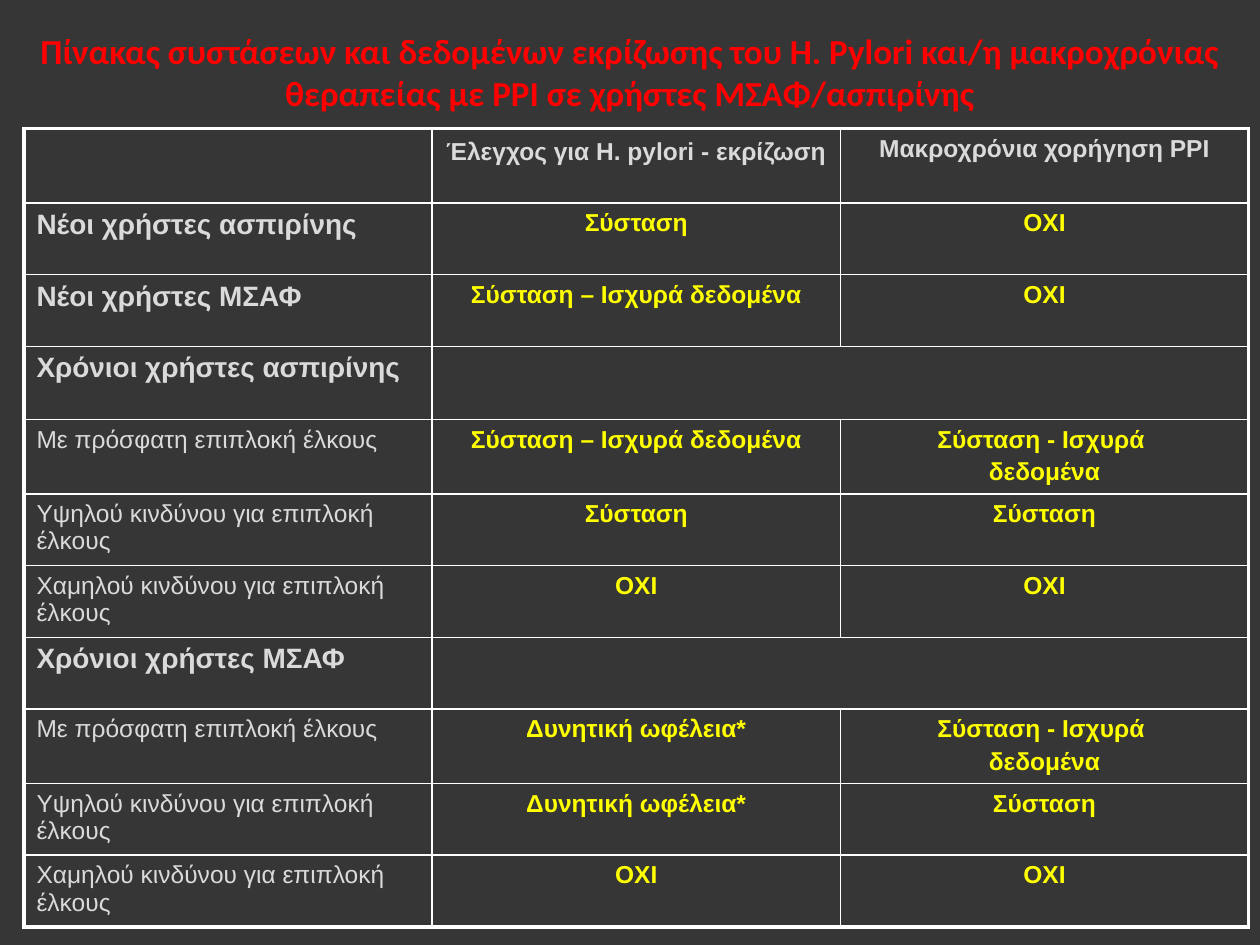
import pptx
import pptx.dml.color
import pptx.enum.text
import pptx.oxml.ns
import pptx.util
from lxml import etree
from pptx.util import Inches

BACKGROUND = pptx.dml.color.RGBColor(0x36, 0x36, 0x36)
RED = pptx.dml.color.RGBColor(0xFF, 0x00, 0x00)
GREY = pptx.dml.color.RGBColor(0xDA, 0xDA, 0xDA)
YELLOW = pptx.dml.color.RGBColor(0xFF, 0xFF, 0x00)
WHITE = pptx.dml.color.RGBColor(0xFF, 0xFF, 0xFF)

TITLE = ("Πίνακας συστάσεων και δεδομένων εκρίζωσης του H. Pylori και/η "
         "μακροχρόνιας θεραπείας με PPI σε χρήστες ΜΣΑΦ/ασπιρίνης")
HEADERS = ["Έλεγχος για H. pylori - εκρίζωση", "Μακροχρόνια χορήγηση PPI"]
RECENT = "Με πρόσφατη επιπλοκή έλκους"
HIGH_RISK = "Υψηλού κινδύνου για επιπλοκή έλκους"
LOW_RISK = "Χαμηλού κινδύνου για επιπλοκή έλκους"
ADVISED = "Σύσταση"
STRONG = "Σύσταση – Ισχυρά δεδομένα"
STRONG_TWO_LINES = "Σύσταση - Ισχυρά \nδεδομένα"
POSSIBLE = "Δυνητική ωφέλεια*"
NO = "ΟΧΙ"
USER_GROUPS = [
    ("Νέοι χρήστες ασπιρίνης", [ADVISED, NO]),
    ("Νέοι χρήστες ΜΣΑΦ", [STRONG, NO]),
    ("Χρόνιοι χρήστες ασπιρίνης", []),
    (RECENT, [STRONG, STRONG_TWO_LINES]),
    (HIGH_RISK, [ADVISED, ADVISED]),
    (LOW_RISK, [NO, NO]),
    ("Χρόνιοι χρήστες ΜΣΑΦ", []),
    (RECENT, [POSSIBLE, STRONG_TWO_LINES]),
    (HIGH_RISK, [POSSIBLE, ADVISED]),
    (LOW_RISK, [NO, NO]),
]
RISK_LEVELS = (RECENT, HIGH_RISK, LOW_RISK)
ROW_HEIGHTS = [0.59, 0.57, 0.57, 0.58, 0.59, 0.57, 0.57, 0.57, 0.59, 0.57, 0.57]
COLUMN_WIDTH = Inches(3.24)


def write_text(frame, text, size=14, color=GREY, bold=True, font="Arial",
               centred=True):
    """Fill a text frame, one paragraph per line of text."""
    frame.text = text
    for index, paragraph in enumerate(frame.paragraphs):
        paragraph.alignment = (pptx.enum.text.PP_ALIGN.CENTER if centred
                               else pptx.enum.text.PP_ALIGN.LEFT)
        if index:
            paragraph.space_before = pptx.util.Pt(2.8)
        for run in paragraph.runs:
            run.font.size = pptx.util.Pt(size)
            run.font.bold = bold
            run.font.name = font
            run.font.color.rgb = color


def draw_borders(cell, outer_sides):
    """Give a cell white borders, thicker on the outer sides of the table."""
    properties = cell._tc.get_or_add_tcPr()
    for side in "LRTB":
        width = pptx.util.Pt(2.25 if side in outer_sides else 1)
        line = etree.SubElement(properties, pptx.oxml.ns.qn(f"a:ln{side}"), w=str(width))
        fill = etree.SubElement(line, pptx.oxml.ns.qn("a:solidFill"))
        etree.SubElement(fill, pptx.oxml.ns.qn("a:srgbClr"), val=str(WHITE))
    cell.fill.background()


def add_title(slide, left, top, width, height):
    """Place the slide title in its box."""
    title = slide.shapes.title
    title.left, title.top, title.width, title.height = left, top, width, height
    frame = title.text_frame
    frame.auto_size = pptx.enum.text.MSO_AUTO_SIZE.NONE
    frame.vertical_anchor = pptx.enum.text.MSO_ANCHOR.MIDDLE
    write_text(frame, TITLE, size=20, color=RED, font="Calibri")


def add_recommendations(slide, left, top, width, height):
    """Place the table of recommendations per user group in its box."""
    table = slide.shapes.add_table(
        len(ROW_HEIGHTS), 3, left, top, width, height).table
    table.first_row = table.horz_banding = False
    for column in table.columns:
        column.width = COLUMN_WIDTH
    for row, row_height in zip(table.rows, ROW_HEIGHTS):
        row.height = Inches(row_height)

    for index, header in enumerate(HEADERS, start=1):
        write_text(table.cell(0, index).text_frame, header)
    spacer = table.cell(0, 1).text_frame.paragraphs[0].add_run()
    spacer.text = " "
    spacer.font.size = pptx.util.Pt(16)
    spacer.font.name = "Roboto"

    for index, (group, advice) in enumerate(USER_GROUPS, start=1):
        is_risk = group in RISK_LEVELS
        write_text(table.cell(index, 0).text_frame, group,
                   size=14 if is_risk else 16, bold=not is_risk, centred=False)
        for column, recommendation in enumerate(advice, start=1):
            write_text(table.cell(index, column).text_frame, recommendation,
                       color=YELLOW)
        if not advice:
            table.cell(index, 1).merge(table.cell(index, 2))

    for row in range(len(ROW_HEIGHTS)):
        for column in range(3):
            cell = table.cell(row, column)
            if cell.is_spanned:
                continue
            last_column = column + (cell.span_width if cell.is_merge_origin else 1) - 1
            at_edge = {"L": column == 0, "R": last_column == 2,
                       "T": row == 0, "B": row == len(ROW_HEIGHTS) - 1}
            draw_borders(cell, [side for side in at_edge if at_edge[side]])


def main():
    """Build and save the presentation."""
    presentation = pptx.Presentation()
    presentation.slide_width, presentation.slide_height = Inches(10), Inches(7.5)
    slide = presentation.slides.add_slide(presentation.slide_layouts[5])
    slide.background.fill.solid()
    slide.background.fill.fore_color.rgb = BACKGROUND
    add_title(slide, Inches(0.12), Inches(0.13), Inches(9.76), Inches(0.87))
    add_recommendations(slide, Inches(0.19), Inches(1.02),
                        3 * COLUMN_WIDTH, Inches(sum(ROW_HEIGHTS)))
    presentation.save("out.pptx")


if __name__ == "__main__":
    main()
